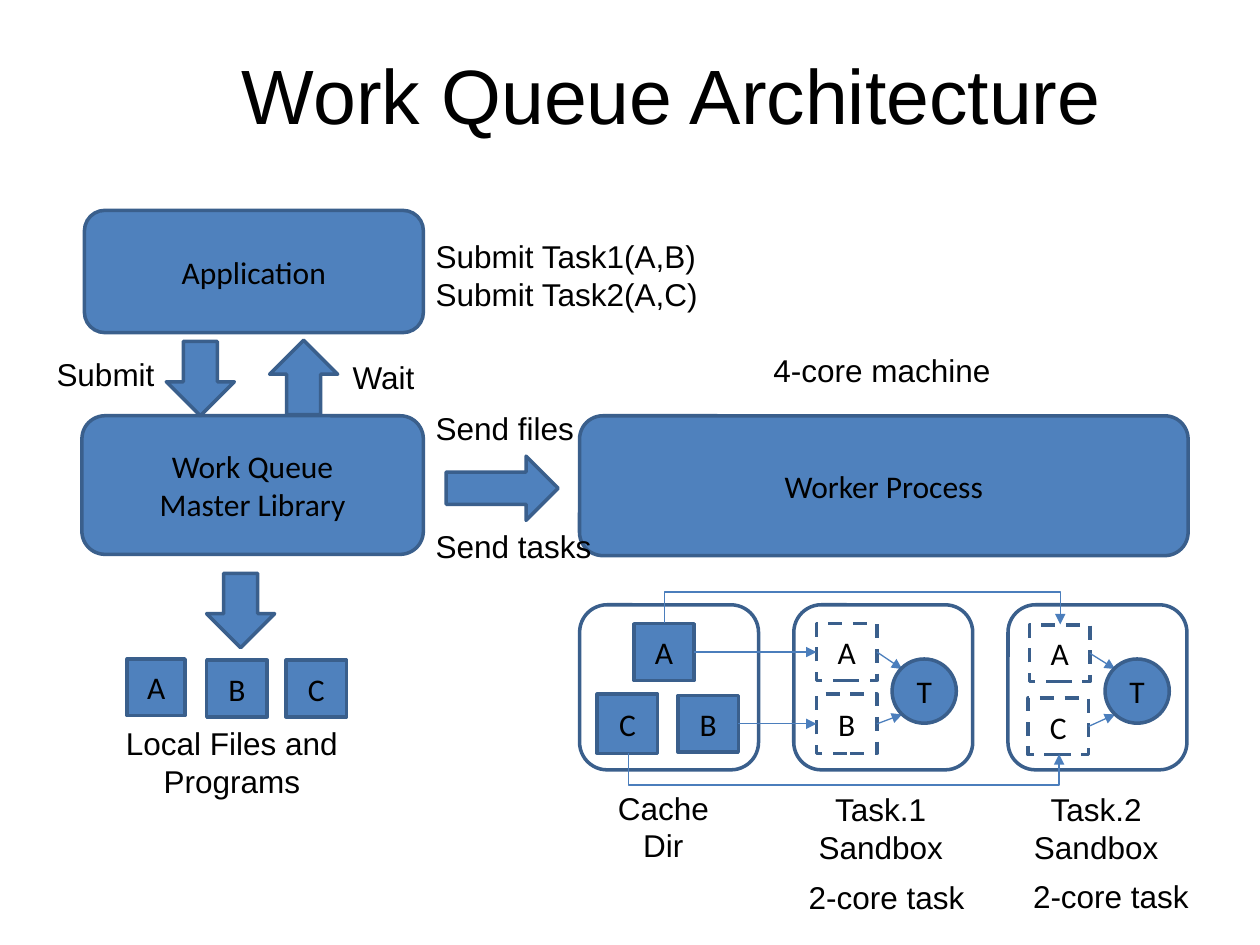
from dataclasses import dataclass

from lxml import etree
from pptx import Presentation
from pptx import util as u
from pptx.dml.color import RGBColor
from pptx.enum import dml, shapes, text
from pptx.oxml.ns import qn

PX = 9144  # EMU per px, 100 px to the inch


@dataclass(frozen=True)
class Theme:
    fill: RGBColor = RGBColor.from_string("4F81BD")
    outline: RGBColor = RGBColor.from_string("3A5F8C")
    connector: RGBColor = RGBColor.from_string("4B7EBC")
    ink: RGBColor = RGBColor.from_string("000000")
    block_font: str = "Calibri"
    label_font: str = "Arial"
    title_size: u.Pt = u.Pt(44)
    body_size: u.Pt = u.Pt(18)
    outline_width: u.Pt = u.Pt(2)
    connector_width: u.Pt = u.Pt(0.75)


theme = Theme()
kinds = shapes.MSO_SHAPE
presentation = Presentation()
presentation.slide_width = 1000 * PX
presentation.slide_height = 750 * PX
slide = presentation.slides.add_slide(presentation.slide_layouts[5])


def add_block(kind, box, words="", filled=True, dashed=False):
    """Add an outlined shape at box (left, top, width, height) with centred words."""
    shape = slide.shapes.add_shape(kind, *(value * PX for value in box))
    shape.shadow.inherit = False
    if filled:
        shape.fill.solid()
        shape.fill.fore_color.rgb = theme.fill
    else:
        shape.fill.background()
    shape.line.color.rgb = theme.outline
    shape.line.width = theme.outline_width
    if dashed:
        shape.line.dash_style = dml.MSO_LINE.DASH
    if words:
        shape.text_frame.text = words
        shape.text_frame.vertical_anchor = text.MSO_ANCHOR.MIDDLE
        for paragraph in shape.text_frame.paragraphs:
            paragraph.alignment = text.PP_ALIGN.CENTER
            paragraph.font.name = theme.block_font
            paragraph.font.size = theme.body_size
            paragraph.font.color.rgb = theme.ink
    return shape


def add_arrow(kind, begin, end):
    """Add a thin connector with a triangle at its end point."""
    connector = slide.shapes.add_connector(
        kind, *(value * PX for value in (*begin, *end)))
    connector.line.color.rgb = theme.connector
    connector.line.width = theme.connector_width
    etree.SubElement(connector.get_or_add_ln(), qn("a:tailEnd"), type="triangle")
    etree.SubElement(connector._element.spPr, qn("a:effectLst"))
    return connector


# Title
title = slide.shapes.title
title.left, title.top, title.width, title.height = (
    value * PX for value in (182, 33, 709, 84))
title.text_frame.text = "Work Queue Architecture"
title.text_frame.word_wrap = False
title.text_frame.auto_size = text.MSO_AUTO_SIZE.NONE
title.text_frame.vertical_anchor = text.MSO_ANCHOR.TOP
paragraph = title.text_frame.paragraphs[0]
paragraph.alignment = text.PP_ALIGN.LEFT
paragraph.font.name = theme.label_font
paragraph.font.size = theme.title_size
paragraph.font.color.rgb = theme.ink

# Processes
for box, words in [
    ((67, 167, 269, 97), "Application"),
    ((65, 330, 271, 110), "Work Queue\nMaster Library"),
    ((460, 330, 483, 111), "Worker Process"),
]:
    add_block(kinds.ROUNDED_RECTANGLE, box, words)

# Block arrows: submit, wait, send, store locally
for kind, box, rotation in [
    (kinds.DOWN_ARROW, (132, 271, 54, 59), 0),
    (kinds.DOWN_ARROW, (214, 270, 54, 59), 180),
    (kinds.RIGHT_ARROW, (354, 362, 89, 51), 0),
    (kinds.DOWN_ARROW, (164, 455, 54, 59), 0),
]:
    add_block(kind, box).rotation = rotation

# Local files
for name, box in [
    ("A", (101, 523, 46, 45)),
    ("B", (164, 524, 48, 45)),
    ("C", (227, 524, 48, 45)),
]:
    add_block(kinds.RECTANGLE, box, name)

# Cache directory
add_block(kinds.ROUNDED_RECTANGLE, (460, 480, 142, 131), filled=False)
cache = {}
for name, box in [
    ("A", (503, 495, 48, 45)),
    ("C", (474, 551, 48, 47)),
    ("B", (538, 552, 48, 45)),
]:
    cache[name] = add_block(kinds.RECTANGLE, box, name)

# Sandboxes: each holds two files that feed one task
sandboxes = []
for left, files in [
    (630, [("A", (648, 495, 48, 45)), ("B", (648, 551, 48, 47))]),
    (800, [("A", (817, 496, 48, 45)), ("C", (816, 554, 48, 45))]),
]:
    add_block(kinds.ROUNDED_RECTANGLE, (left, 480, 142, 131), filled=False)
    sandbox = {}
    task_left = left + 78 if left == 630 else left + 77
    for (name, box), task_y in zip(files, (531, 567)):
        sandbox[name] = add_block(
            kinds.RECTANGLE, box, name, filled=False, dashed=True)
        feed = add_arrow(shapes.MSO_CONNECTOR.STRAIGHT,
                         (box[0] + box[2], box[1] + box[3] // 2),
                         (task_left + 8, task_y))
        feed.begin_connect(sandbox[name], 3)
    add_block(kinds.OVAL, (task_left, 523, 51, 51), "T")
    sandboxes.append(sandbox)

# Cached files go straight into the first sandbox
for name, y in [("A", 517), ("B", 575)]:
    link = add_arrow(shapes.MSO_CONNECTOR.STRAIGHT, (551, y), (648, y))
    link.begin_connect(cache[name], 3)
    link.end_connect(sandboxes[0][name], 1)

# and around the frames into the second; a quarter turn makes each run vertical first
for begin_x, end_x, y, detour in [(527, 841, 495, -25), (498, 840, 598, 26)]:
    middle, half = (begin_x + end_x) // 2, (end_x - begin_x) // 2
    link = add_arrow(shapes.MSO_CONNECTOR.ELBOW,
                     (middle + 1, y - half), (middle, y + half))
    link._element.spPr.find(qn("a:xfrm")).set("rot", str(270 * 60000))
    geometry = link._element.spPr.find(qn("a:prstGeom"))
    etree.SubElement(geometry.find(qn("a:avLst")), qn("a:gd"),
                     name="adj1", fmla=f"val {detour * 100000}")

# Labels
left_aligned, centred = text.PP_ALIGN.LEFT, text.PP_ALIGN.CENTER
for box, words, alignment in [
    ((336, 183, 230, 71), "Submit Task1(A,B)\nSubmit Task2(A,C)", left_aligned),
    ((35, 277, 99, 40), "Submit", left_aligned),
    ((270, 279, 70, 40), "Wait", left_aligned),
    ((604, 274, 194, 40), "4-core machine", left_aligned),
    ((336, 320, 131, 40), "Send files", left_aligned),
    ((336, 413, 145, 40), "Send tasks", left_aligned),
    ((55, 570, 258, 71), "Local Files and Programs", centred),
    ((480, 621, 93, 71), "Cache\nDir", centred),
    ((639, 622, 120, 71), "Task.1\nSandbox", centred),
    ((810, 622, 120, 71), "Task.2\nSandbox", centred),
    ((632, 692, 145, 40), "2-core task", left_aligned),
    ((810, 691, 145, 40), "2-core task", left_aligned),
]:
    label = slide.shapes.add_textbox(*(value * PX for value in box))
    label.text_frame.text = words
    label.text_frame.word_wrap = words.startswith("Local")
    label.text_frame.auto_size = text.MSO_AUTO_SIZE.SHAPE_TO_FIT_TEXT
    for paragraph in label.text_frame.paragraphs:
        paragraph.alignment = alignment
        paragraph.font.name = theme.label_font
        paragraph.font.size = theme.body_size
        paragraph.font.color.rgb = theme.ink

presentation.save("out.pptx")
